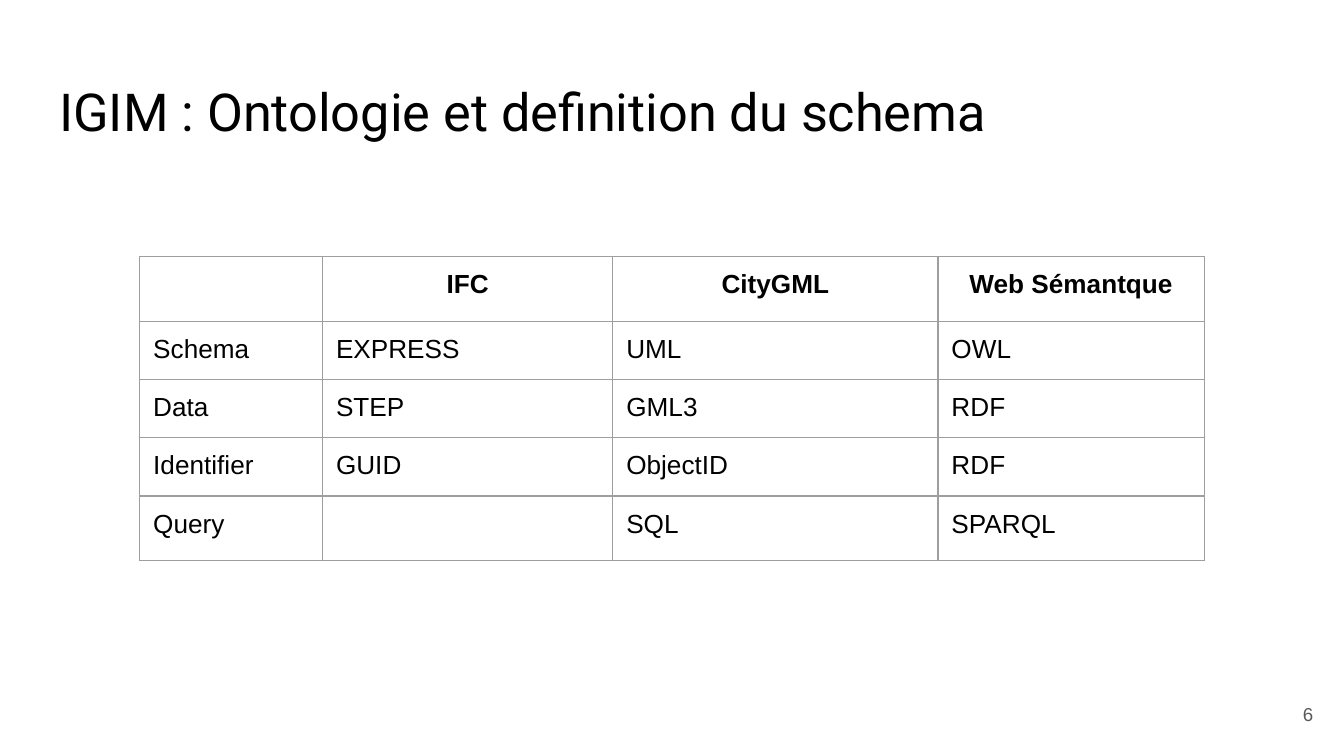
import lxml.etree
import pptx
import pptx.dml.color
import pptx.enum.text
import pptx.oxml
import pptx.oxml.ns
import pptx.util
from pptx.util import Inches

COLORS = {"text": "000000", "border": "9E9E9E", "number": "595959"}
ALIGN = pptx.enum.text.PP_ALIGN
ANCHOR = pptx.enum.text.MSO_ANCHOR

COLUMN_WIDTHS = [1.36, 2.16, 2.42, 1.98]
ROW_HEIGHTS = [0.48, 0.42, 0.42, 0.42, 0.48]
COMPARISON = [
    ["", "IFC", "CityGML", "Web Sémantque"],
    ["Schema", "EXPRESS", "UML", "OWL"],
    ["Data", "STEP", "GML3", "RDF"],
    ["Identifier", "GUID", "ObjectID", "RDF"],
    ["Query", "", "SQL", "SPARQL"],
]


def set_margins(box):
    box.margin_left = box.margin_right = Inches(0.1)
    box.margin_top = box.margin_bottom = Inches(0.1)


def write(frame, text, size, color, font="Arial", align=ALIGN.LEFT, bold=False):
    frame.text = text
    paragraph = frame.paragraphs[0]
    paragraph.alignment = align
    paragraph.font.name = font
    paragraph.font.size = pptx.util.Pt(size)
    paragraph.font.bold = bold
    paragraph.font.color.rgb = pptx.dml.color.RGBColor.from_string(COLORS[color])


def add_title(slide, text):
    title = slide.shapes.title
    title.left, title.top = Inches(0.34), Inches(0.49)
    title.width, title.height = Inches(9.32), Inches(0.63)
    frame = title.text_frame
    set_margins(frame)
    frame.auto_size = pptx.enum.text.MSO_AUTO_SIZE.NONE
    frame.vertical_anchor = ANCHOR.TOP
    write(frame, text, 28, "text", font="Roboto")


def add_page_number(slide, number):
    page_number = slide.shapes.add_textbox(
        Inches(9.27), Inches(5.1), Inches(0.6), Inches(0.43))
    frame = page_number.text_frame
    frame.word_wrap = True
    frame.vertical_anchor = ANCHOR.MIDDLE
    set_margins(frame)
    write(frame, number, 10, "number", align=ALIGN.RIGHT)


def draw_borders(cell):
    properties = cell._tc.get_or_add_tcPr()
    for side in ("lnL", "lnR", "lnT", "lnB"):
        properties.append(pptx.oxml.parse_xml(
            f'<a:{side} {pptx.oxml.ns.nsdecls("a")} w="{pptx.util.Pt(0.75)}">'
            f'<a:solidFill><a:srgbClr val="{COLORS["border"]}"/></a:solidFill>'
            f'</a:{side}>'))


def size_empty_cell(cell):
    paragraph = cell.text_frame.paragraphs[0]._p
    ending = lxml.etree.SubElement(paragraph, pptx.oxml.ns.qn("a:endParaRPr"), sz="1400")
    lxml.etree.SubElement(ending, pptx.oxml.ns.qn("a:latin"), typeface="Arial")


def add_comparison(slide):
    table = slide.shapes.add_table(
        len(ROW_HEIGHTS), len(COLUMN_WIDTHS), Inches(1.04), Inches(1.91),
        Inches(sum(COLUMN_WIDTHS)), Inches(sum(ROW_HEIGHTS))).table
    table.first_row = table.horz_banding = False
    for column, width in zip(table.columns, COLUMN_WIDTHS):
        column.width = Inches(width)
    for row_index, (row, height) in enumerate(zip(table.rows, ROW_HEIGHTS)):
        row.height = Inches(height)
        header = row_index == 0
        for cell, text in zip(row.cells, COMPARISON[row_index]):
            set_margins(cell)
            draw_borders(cell)
            cell.fill.background()
            if text:
                write(cell.text_frame, text, 14, "text", bold=header,
                      align=ALIGN.CENTER if header else ALIGN.LEFT)
            else:
                size_empty_cell(cell)


def main():
    presentation = pptx.Presentation()
    presentation.slide_width = Inches(10)
    presentation.slide_height = presentation.slide_width * 9 // 16
    slide = presentation.slides.add_slide(presentation.slide_layouts[5])
    add_title(slide, "IGIM : Ontologie et definition du schema")
    add_page_number(slide, "6")
    add_comparison(slide)
    presentation.save("out.pptx")


if __name__ == "__main__":
    main()
